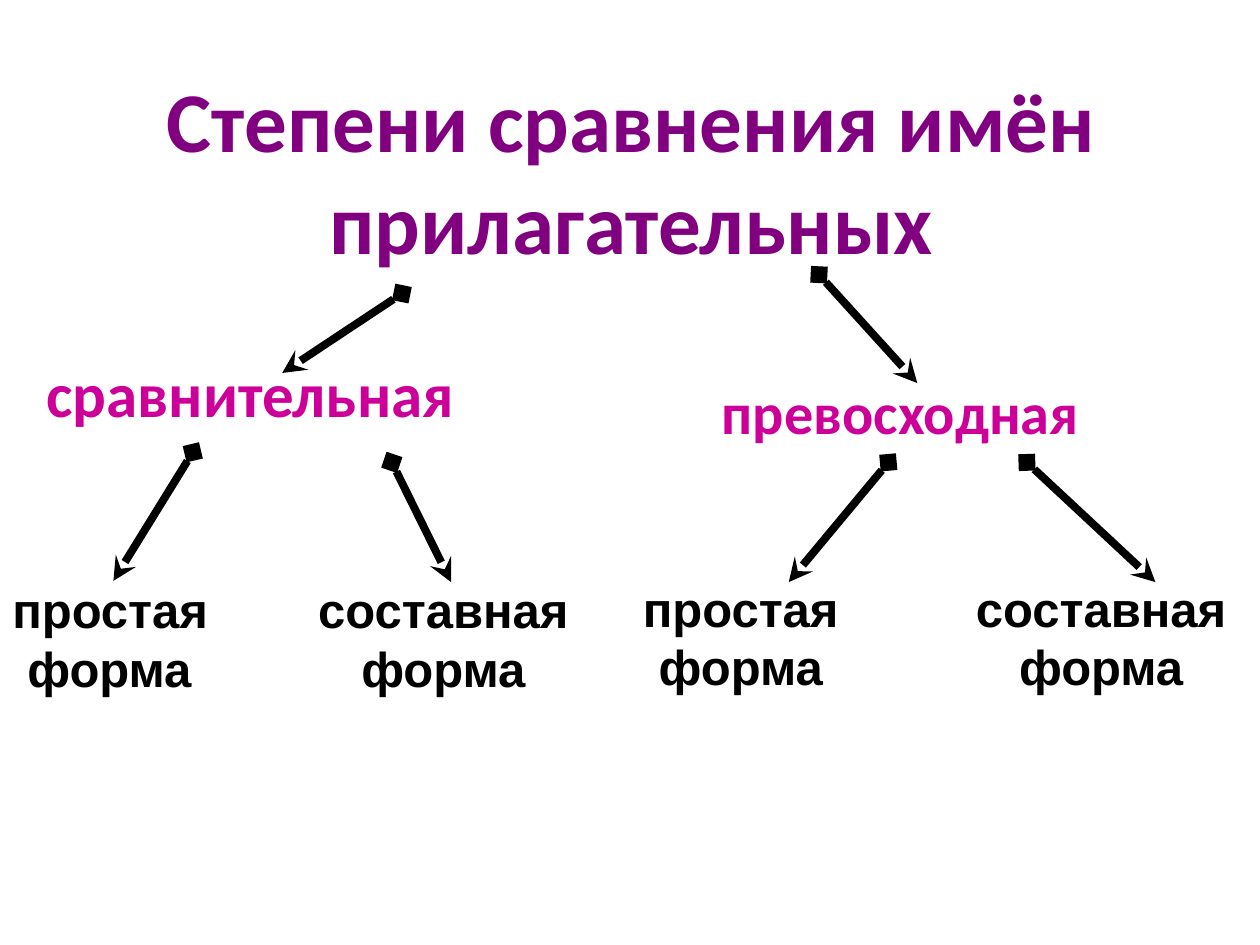
from dataclasses import dataclass

from lxml.etree import SubElement as Sub
from pptx import Presentation as Deck
from pptx.dml.color import RGBColor as Rgb
from pptx.enum.shapes import MSO_CONNECTOR as Link
from pptx.enum.text import MSO_ANCHOR as Anchor, PP_ALIGN as Align
from pptx.oxml.ns import qn
from pptx.util import Inches, Pt

HUES = {"title": "800080", "degree": "CC0099", "ink": "000000"}


@dataclass
class Label:
    box: tuple[float, float, float, float]
    lines: tuple[str, ...]
    face: str
    size: float
    hue: str
    para: dict
    anchor: Anchor = Anchor.TOP
    tabs: tuple[float, ...] = ()


@dataclass
class Arrow:
    start: tuple[float, float]
    end: tuple[float, float]


def apply(item, style: dict) -> None:
    for key, val in style.items():
        setattr(item, key, val)


def add_tabs(para, stops: tuple[float, ...]) -> None:
    """Set centred tab stops, measured from the text edge."""
    group = Sub(para._p.get_or_add_pPr(), qn("a:tabLst"))
    for stop in stops:
        Sub(group, qn("a:tab"), pos=str(Inches(stop)), algn="ctr")


def draw_label(slide, label: Label) -> None:
    frame = slide.shapes.add_textbox(*map(Inches, label.box)).text_frame
    apply(frame, {"word_wrap": True, "vertical_anchor": label.anchor})
    for i, line in enumerate(label.lines):
        para = frame.add_paragraph() if i else frame.paragraphs[0]
        apply(para, label.para)
        if label.tabs:
            add_tabs(para, label.tabs)
        run = para.add_run()
        run.text = line
        apply(run.font, {"name": label.face, "size": Pt(label.size), "bold": True})
        run.font.color.rgb = Rgb.from_string(HUES[label.hue])


def draw_arrow(slide, arrow: Arrow) -> None:
    ends = map(Inches, arrow.start + arrow.end)
    shape = slide.shapes.add_connector(Link.STRAIGHT, *ends)
    shape.line.width = Pt(4.5)
    shape.line.color.rgb = Rgb.from_string(HUES["ink"])
    line = shape.line._get_or_add_ln()
    Sub(line, qn("a:headEnd"), type="diamond")
    Sub(line, qn("a:tailEnd"), type="stealth")
    Sub(shape._element.spPr, qn("a:effectLst"))


def forms(box: tuple[float, float, float, float], tabs: tuple[float, ...]) -> Label:
    """Two captions side by side, each centred on its tab stop."""
    lines = ("\tпростая\tсоставная", "\tформа\tформа")
    return Label(box, lines, "Arial", 28, "ink", {}, Anchor.MIDDLE, tabs)


TIGHT = {"line_spacing": 0.8}

LABELS = [
    # Title
    Label((0.51, 0.52, 9, 1.65), ("Степени сравнения имён прилагательных",),
          "Calibri", 48.6, "title", {"alignment": Align.CENTER}, Anchor.MIDDLE),
    # Degrees
    Label((0.27, 2.88, 4.42, 0.58), ("сравнительная",), "Calibri", 36, "degree", TIGHT),
    Label((5.63, 3.04, 4.02, 0.55), ("превосходная",), "Calibri", 33.3, "degree", TIGHT),
    # Forms of each degree
    forms((0, 4.55, 4.84, 1.03), (0.77, 3.42)),
    forms((4.69, 4.54, 5.31, 1.03), (1.09, 3.95)),
]

ARROWS = [
    # Title to degrees
    Arrow((3.19, 2.33), (2.24, 2.96)),
    Arrow((6.5, 2.18), (7.28, 3.04)),
    # Degrees to forms
    Arrow((1.53, 3.59), (0.9, 4.61)),
    Arrow((3.11, 3.67), (3.58, 4.62)),
    Arrow((7.05, 3.67), (6.26, 4.62)),
    Arrow((8.15, 3.67), (9.17, 4.62)),
]


def main() -> None:
    deck = Deck()
    apply(deck, {"slide_width": Inches(10), "slide_height": Inches(7.5)})
    slide = deck.slides.add_slide(deck.slide_layouts[6])
    for arrow in ARROWS:
        draw_arrow(slide, arrow)
    for label in LABELS:
        draw_label(slide, label)
    deck.save("out.pptx")


if __name__ == "__main__":
    main()
